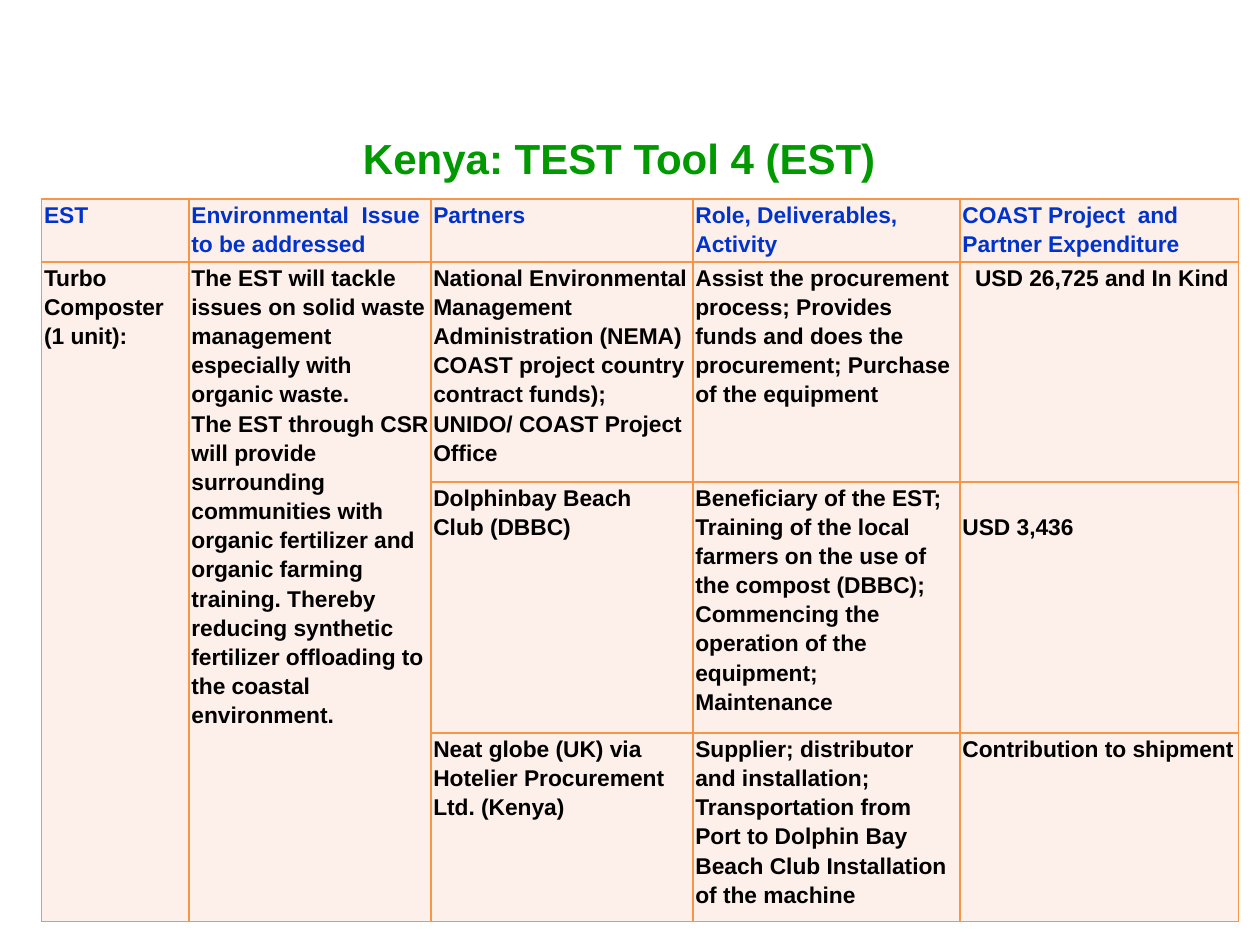
from lxml.etree import SubElement
from pptx import Presentation
from pptx.dml.color import RGBColor
from pptx.enum.text import MSO_ANCHOR, PP_ALIGN
from pptx.oxml.ns import qn
from pptx.util import Inches, Pt

COLS = [1.17, 1.92, 2.08, 2.12, 2.21]
ROWS = [0.47, 1.62, 1.85, 1.39]
HEAD = ["EST", "Environmental  Issue to be addressed", "Partners",
        "Role, Deliverables, Activity", "COAST Project  and Partner Expenditure"]
BODY = [
    ["Turbo Composter (1 unit):",
     "The EST will tackle issues on solid waste management especially with "
     "organic waste.\nThe EST through CSR will provide surrounding communities "
     "with organic fertilizer and organic farming training. Thereby reducing "
     "synthetic fertilizer offloading to the coastal environment.",
     "National Environmental Management Administration (NEMA) COAST project "
     "country contract funds); UNIDO/ COAST Project Office",
     "Assist the procurement process; Provides funds and does the procurement; "
     "Purchase of the equipment",
     "USD 26,725 and In Kind"],
    ["", "", "Dolphinbay Beach  Club (DBBC)",
     "Beneficiary of the EST; Training of the local farmers on the use of the "
     "compost (DBBC); Commencing the operation of the equipment; Maintenance",
     "USD 3,436"],
    ["", "", "Neat globe (UK) via Hotelier Procurement Ltd. (Kenya)",
     "Supplier; distributor and installation; Transportation from Port to "
     "Dolphin Bay Beach Club Installation of the machine",
     "Contribution to shipment"],
]


def color(text):
    """Turn a hex string into a colour."""
    return RGBColor.from_string(text)


def write(para, text, size, tint):
    """Add one bold run to a paragraph."""
    run = para.add_run()
    run.text = text
    font = run.font
    font.name, font.size, font.bold = "Arial", Pt(size), True
    font.color.rgb = color(tint)


def border(cell, tint):
    """Draw a one-point line on every side of a cell."""
    props = cell._tc.get_or_add_tcPr()
    for i, side in enumerate(("a:lnL", "a:lnR", "a:lnT", "a:lnB")):
        line = props.makeelement(qn(side), {"w": str(Pt(1))})
        fill = SubElement(line, qn("a:solidFill"))
        SubElement(fill, qn("a:srgbClr"), val=tint)
        props.insert(i, line)


def fill_cell(cell, text, tint):
    """Style a cell and write its paragraphs."""
    cell.fill.solid()
    cell.fill.fore_color.rgb = color("FDEFE9")
    border(cell, "F79646")
    cell.margin_left = cell.margin_right = Inches(0.02)
    cell.margin_top = cell.margin_bottom = 0
    frame = cell.text_frame
    for i, part in enumerate(text.split("\n")):
        para = frame.add_paragraph() if i else frame.paragraphs[0]
        para.line_spacing = 1.15
        if part:
            write(para, part, 13, tint)
        else:
            para.font.size = Pt(13)


def add_title(slide, text):
    """Add the centred slide title."""
    box = slide.shapes.add_textbox(Inches(0.33), Inches(1), Inches(9.17), Inches(0.75))
    frame = box.text_frame
    frame.word_wrap = True
    frame.vertical_anchor = MSO_ANCHOR.TOP
    para = frame.paragraphs[0]
    para.alignment = PP_ALIGN.CENTER
    write(para, text, 24, "009900")


def add_grid(slide):
    """Add the table of partners, roles and costs."""
    table = slide.shapes.add_table(
        len(ROWS), len(COLS), Inches(0.33), Inches(1.58),
        Inches(sum(COLS)), Inches(sum(ROWS))).table
    table.horz_banding = False
    for col, width in zip(table.columns, COLS):
        col.width = Inches(width)
    for row, height in zip(table.rows, ROWS):
        row.height = Inches(height)
    for r, line in enumerate([HEAD] + BODY):
        for c, text in enumerate(line):
            fill_cell(table.cell(r, c), text, "000000" if r else "0033CC")
    for c in (0, 1):
        table.cell(1, c).merge(table.cell(3, c))
    table.cell(1, 4).margin_left = Inches(0.12)
    table.cell(2, 4).margin_top = Inches(0.23)


def main():
    """Build and save the slide."""
    deck = Presentation()
    deck.slide_width, deck.slide_height = Inches(10), Inches(7.5)
    slide = deck.slides.add_slide(deck.slide_layouts[6])
    add_title(slide, "Kenya: TEST Tool 4 (EST)")
    add_grid(slide)
    deck.save("out.pptx")


if __name__ == "__main__":
    main()
